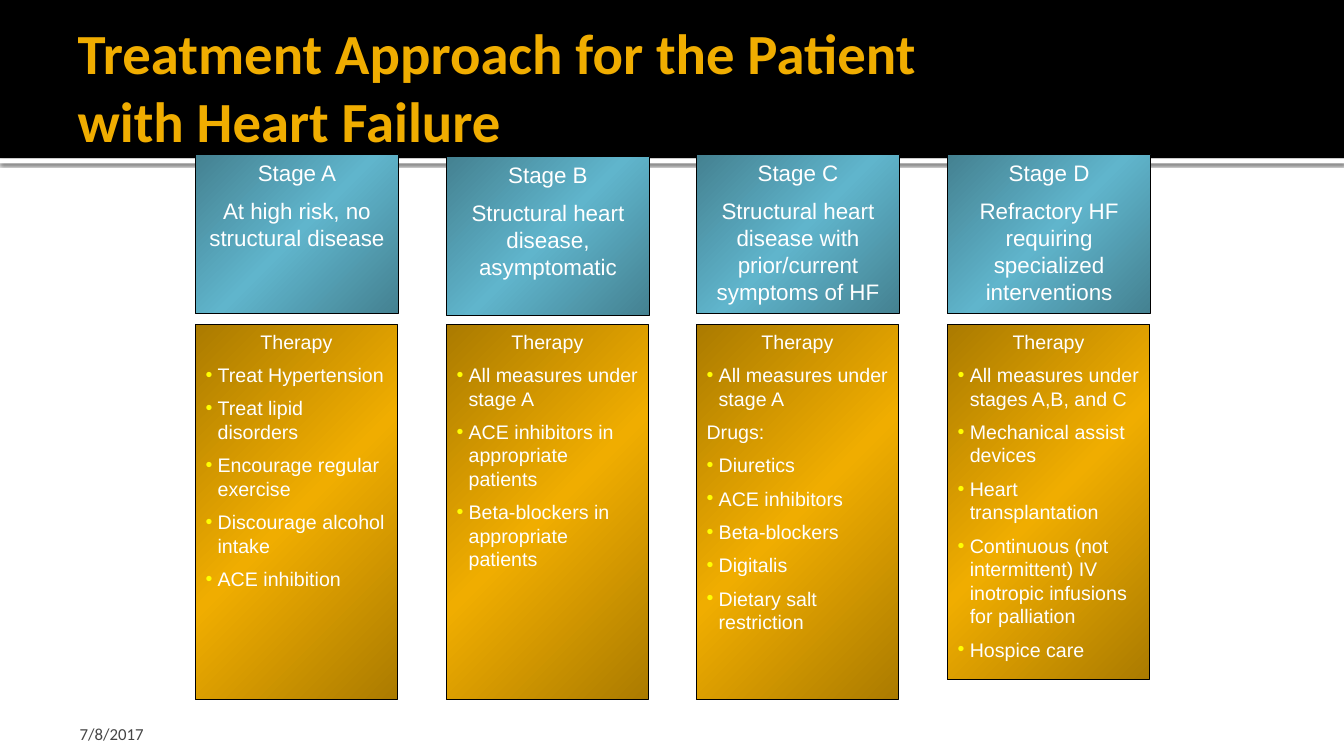
from dataclasses import dataclass

import pptx
import pptx.dml.color
import pptx.enum.shapes
import pptx.enum.text
import pptx.oxml
import pptx.oxml.ns
import pptx.util

PX = 9144  # 100 px to the inch
WIDE, HIGH = 1333, 750
BLUE, GOLD = "60B5CC", "F0AD00"
WHITE, BLACK, GREY, YELLOW = "FFFFFF", "000000", "454545", "FFFF00"
NS = pptx.oxml.ns.nsdecls("a")
ALIGN = pptx.enum.text.PP_ALIGN
ANCHOR = pptx.enum.text.MSO_ANCHOR
RECT = pptx.enum.shapes.MSO_SHAPE.RECTANGLE


@dataclass
class Box:
    left: int
    top: int
    width: int
    height: int

    def emu(self) -> list[int]:
        return [n * PX for n in (self.left, self.top, self.width, self.height)]


@dataclass
class Line:
    text: str
    center: bool = False
    hang: int = 0
    bullet: bool = False


@dataclass
class Stage:
    name: str
    risk: str
    steps: list[str]  # a step that ends in a colon is a plain label
    top: int = 153
    height: int = 372


STAGES = [
    Stage("Stage A", "At high risk, no structural disease",
          ["Treat Hypertension", "Treat lipid disorders", "Encourage regular exercise",
           "Discourage alcohol intake", "ACE inhibition"]),
    Stage("Stage B", "Structural heart disease, asymptomatic",
          ["All measures under stage A", "ACE inhibitors in appropriate patients",
           "Beta-blockers in appropriate patients"], top=155),
    Stage("Stage C", "Structural heart disease with prior/current symptoms of HF",
          ["All measures under stage A", "Drugs:", "Diuretics", "ACE inhibitors",
           "Beta-blockers", "Digitalis", "Dietary salt restriction"]),
    Stage("Stage D", "Refractory HF requiring specialized interventions",
          ["All measures under stages A,B, and C", "Mechanical assist devices",
           "Heart transplantation",
           "Continuous (not intermittent) IV inotropic infusions for palliation",
           "Hospice care"], height=352),
]


def color(code: str) -> pptx.dml.color.RGBColor:
    return pptx.dml.color.RGBColor.from_string(code)


def style(item, values: dict) -> None:
    for key, value in values.items():
        setattr(item, key, value)


def write(para, text: str, face: str, size: float, tint: str, bold: bool = False) -> None:
    para.text = text
    for run in para.runs:
        style(run.font, {"name": face, "size": pptx.util.Pt(size), "bold": bold})
        run.font.color.rgb = color(tint)


def frame(shape, anchor, pads: tuple[int, int, int, int]) -> None:
    left, top, right, bottom = (n * PX for n in pads)
    style(shape.text_frame, {
        "word_wrap": True, "auto_size": pptx.enum.text.MSO_AUTO_SIZE.NONE,
        "vertical_anchor": anchor, "margin_left": left, "margin_top": top,
        "margin_right": right, "margin_bottom": bottom})


def bar(slide, box: Box, tint: str):
    shape = slide.shapes.add_shape(RECT, *box.emu())
    shape.shadow.inherit = False
    shape.fill.solid()
    shape.fill.fore_color.rgb = color(tint)
    shape.line.fill.background()
    return shape


def shade(shape) -> None:
    """Soft shadow straight below a shape."""
    effect = shape._element.spPr.find(pptx.oxml.ns.qn("a:effectLst"))
    effect.append(pptx.oxml.parse_xml(
        f'<a:outerShdw {NS} blurRad="31750" dist="10160" dir="5400000" algn="tl" '
        f'rotWithShape="0"><a:srgbClr val="{BLACK}"><a:alpha val="60000"/></a:srgbClr>'
        '</a:outerShdw>'))


def blend(shape, tint: str) -> None:
    """Diagonal gradient, dark at both corners and bright in the middle."""
    dark = f'<a:srgbClr val="{tint}"><a:shade val="46275"/></a:srgbClr>'
    stops = [(0, dark), (50000, f'<a:srgbClr val="{tint}"/>'), (100000, dark)]
    body = "".join(f'<a:gs pos="{pos}">{code}</a:gs>' for pos, code in stops)
    fill = shape._element.spPr.find(pptx.oxml.ns.qn("a:solidFill"))
    fill.getparent().replace(fill, pptx.oxml.parse_xml(
        f'<a:gradFill {NS} rotWithShape="1"><a:gsLst>{body}</a:gsLst>'
        '<a:lin ang="2700000" scaled="1"/></a:gradFill>'))


def layout(para, line: Line) -> None:
    """Spacing, hanging indent and bullet of one paragraph."""
    para.alignment = ALIGN.CENTER if line.center else ALIGN.LEFT
    props = para._p.get_or_add_pPr()
    props.set("marL", str(line.hang * PX))
    props.set("indent", str(-line.hang * PX))
    parts = [f'<a:spcBef {NS}><a:spcPct val="50000"/></a:spcBef>']
    if line.bullet:
        parts += [f'<a:buClr {NS}><a:srgbClr val="{YELLOW}"/></a:buClr>',
                  f'<a:buFont {NS} typeface="Arial"/>', f'<a:buChar {NS} char="•"/>']
    for part in parts:
        props.append(pptx.oxml.parse_xml(part))


def panel(slide, box: Box, tint: str, lines: list[Line], size: int) -> None:
    shape = bar(slide, box, tint)
    blend(shape, tint)
    shape.line.color.rgb = color(BLACK)
    shape.line.width = pptx.util.Pt(0.75)
    frame(shape, ANCHOR.TOP, (10, 5, 10, 5))
    text = shape.text_frame
    for i, line in enumerate(lines):
        para = text.add_paragraph() if i else text.paragraphs[0]
        write(para, line.text, "Arial", size, WHITE)
        layout(para, line)


def main() -> None:
    deck = pptx.Presentation()
    style(deck, {"slide_width": WIDE * PX, "slide_height": HIGH * PX})
    slide = deck.slides.add_slide(deck.slide_layouts[5])

    # Header band with its white edge
    shade(bar(slide, Box(0, 157, WIDE, 5), WHITE))
    bar(slide, Box(0, 0, WIDE, 157), BLACK)

    # Title, in front of the band
    title = slide.shapes.title
    slide.shapes._spTree.append(title._element)
    style(title, dict(zip(("left", "top", "width", "height"), Box(67, 17, 1200, 137).emu())))
    frame(title, ANCHOR.MIDDLE, (10, 5, 5, 5))
    head = title.text_frame.paragraphs[0]
    write(head, "Treatment Approach for the Patient \vwith Heart Failure",
          "Calibri", 40.5, GOLD, True)
    head.alignment = ALIGN.LEFT

    # One column per stage: the stage above, its therapy below
    for i, stage in enumerate(STAGES):
        left = 194 + round(i * 248.67)
        panel(slide, Box(left, stage.top, 201, 158), BLUE,
              [Line(stage.name, True), Line(stage.risk, True)], 16)
        steps = [Line(step, hang=12, bullet=not step.endswith(":")) for step in stage.steps]
        panel(slide, Box(left, 322, 200, stage.height), GOLD,
              [Line("Therapy", True, 12), *steps], 14)

    # Date
    date = slide.shapes.add_textbox(*Box(67, 708, 311, 30).emu())
    frame(date, ANCHOR.BOTTOM, (12, 5, 5, 0))
    write(date.text_frame.paragraphs[0], "7/8/2017", "Calibri", 12, GREY)

    deck.save("out.pptx")


if __name__ == "__main__":
    main()
